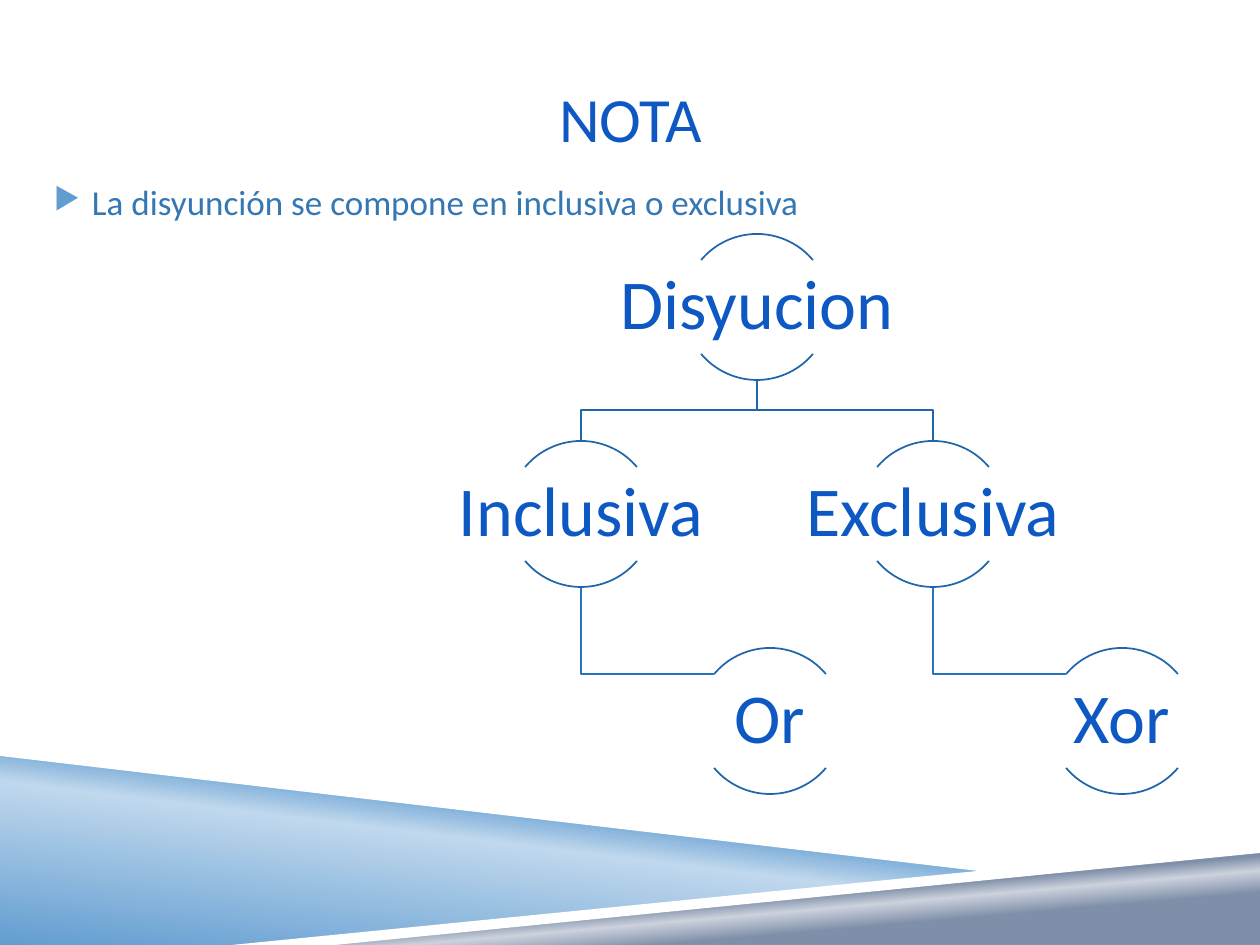
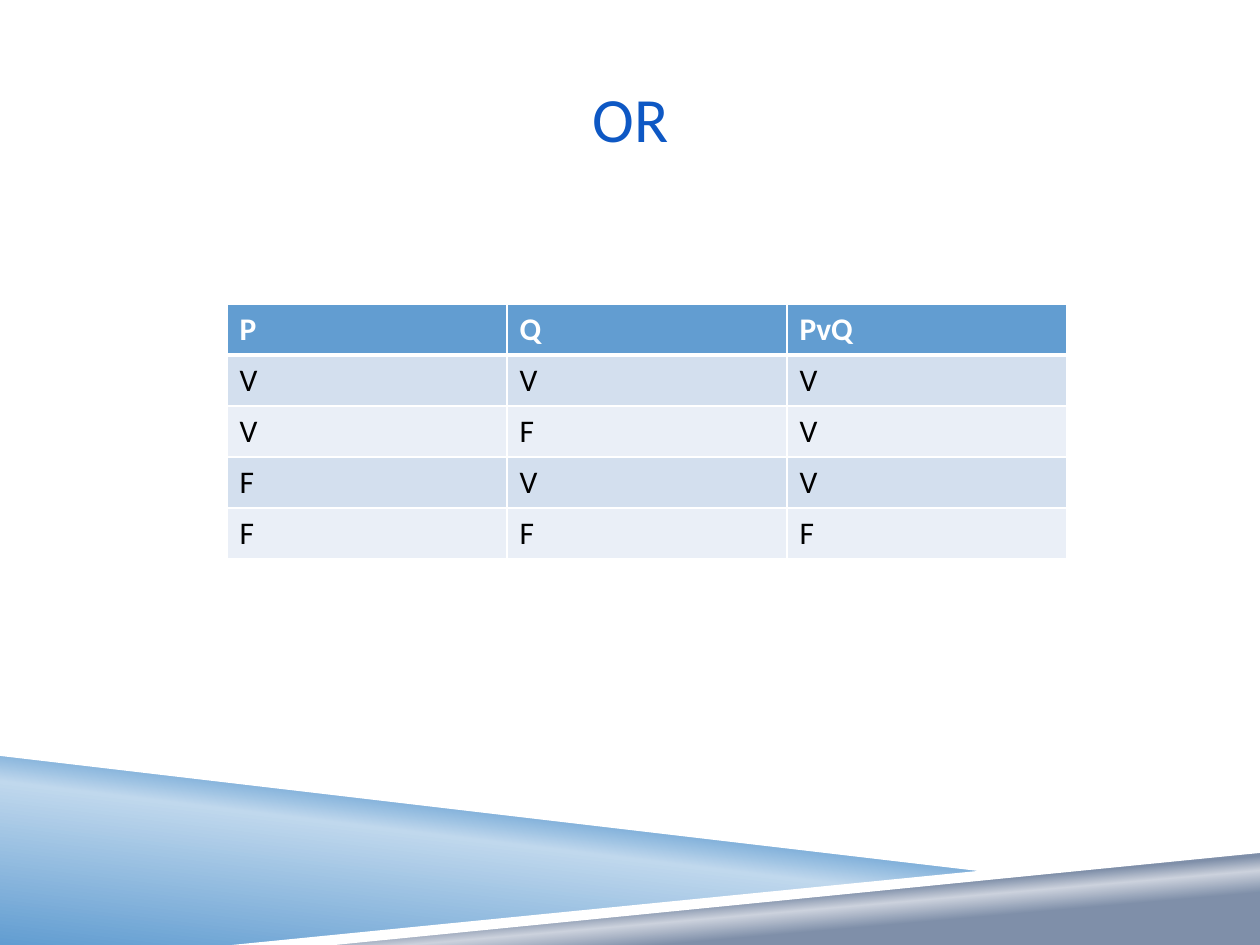
from lxml import etree
from pptx import Presentation, util as u
from pptx.dml.color import RGBColor
from pptx.enum import shapes as sh, text as tx
from pptx.oxml import parse_xml
from pptx.oxml.ns import qn, nsdecls

PX = 914400 / 126  # EMU in one px
WIDE, HIGH = 1260, 945
FONT = "Calibri"
BLUE, SKY, PALE = "0E58C4", "629DD1", "C0D8ED"
GREY, MIST, WHITE, BLACK = "7F8FA9", "CCD2DD", "FFFFFF", "000000"
TEAL, EDGE, LINK = "3477B2", "2166AB", "2573C1"
ODD, EVEN = "D3DFEE", "EAEFF7"


def px(n):
    return u.Emu(round(n * PX))


def rgb(code):
    return RGBColor.from_string(code)


# Basic parts

def write(para, words, size, color, bold=False):
    run = para.add_run()
    run.text = words
    font = run.font
    font.name, font.size, font.bold = FONT, u.Pt(size), bold
    font.color.rgb = rgb(color)


def add_text(slide, box, pad, anchor=tx.MSO_ANCHOR.TOP):
    """Empty text box; pad is the side and the top inset."""
    frame = slide.shapes.add_textbox(*map(px, box)).text_frame
    frame.word_wrap = True
    frame.vertical_anchor = anchor
    frame.margin_left = frame.margin_right = px(pad[0])
    frame.margin_top = frame.margin_bottom = px(pad[1])
    return frame


def outline(slide, points, close):
    pen = slide.shapes.build_freeform(*points[0], scale=PX)
    pen.add_line_segments(points[1:], close=close)
    shape = pen.convert_to_shape()
    shape.shadow.inherit = False
    return shape


def stroke(shape, color):
    shape.fill.background()
    shape.line.color.rgb = rgb(color)
    shape.line.width = u.Pt(1)


def blend(shape, stops, angle):
    marks = "".join(
        f'<a:gs pos="{pos * 1000}"><a:srgbClr val="{color}"/></a:gs>'
        for pos, color in stops)
    grad = parse_xml(
        f'<a:gradFill {nsdecls("a")} rotWithShape="1"><a:gsLst>{marks}</a:gsLst>'
        f'<a:lin ang="{angle * 60000}" scaled="0"/></a:gradFill>')
    shape._element.spPr.find(qn("a:custGeom")).addnext(grad)


# Shared look: bands at the foot and the title

def add_bands(slide):
    bands = [
        ([(0, 752), (998, 872), (252, HIGH), (0, HIGH)],
         [(0, SKY), (52, PALE), (66, SKY)], 277),
        ([(249, HIGH), (WIDE, 847), (WIDE, HIGH)],
         [(28, GREY), (40, MIST), (48, GREY)], 265),
        ([(0, 746), (0, 756), (995, 873), (1048, 869)], None, 0),
        ([(WIDE, 843), (232, HIGH), (335, HIGH), (WIDE, 853)], None, 0),
    ]
    for points, stops, angle in bands:
        band = outline(slide, points, True)
        band.line.fill.background()
        if stops:
            blend(band, stops, angle)
        else:
            band.fill.solid()
            band.fill.fore_color.rgb = rgb(WHITE)


def add_page(deck, title):
    slide = deck.slides.add_slide(deck.slide_layouts[6])
    add_bands(slide)
    frame = add_text(slide, (95, 38, 1071, 158), (0, 6), tx.MSO_ANCHOR.MIDDLE)
    para = frame.paragraphs[0]
    para.alignment = tx.PP_ALIGN.CENTER
    write(para, title, 36, BLUE)
    return slide


# Bulleted text

def add_point(slide, box, words):
    para = add_text(slide, box, (0, 6)).paragraphs[0]
    props = para._p.get_or_add_pPr()
    props.set("marL", str(px(48)))
    props.set("indent", str(px(-38)))
    color = etree.SubElement(props, qn("a:buClr"))
    etree.SubElement(color, qn("a:srgbClr")).set("val", SKY)
    etree.SubElement(props, qn("a:buSzPct")).set("val", "85000")
    etree.SubElement(props, qn("a:buChar")).set("char", "▶")
    write(para, words, 20, TEAL)


# Tree of nodes, each a label between two arcs

RING, STEP = 146, 207  # circle size, distance between rows


def add_node(slide, left, top, words):
    for start, end in ((132, 192), (24, 84)):
        arc = slide.shapes.add_shape(
            sh.MSO_SHAPE.ARC, *map(px, (left, top, RING, RING)))
        arc.adjustments[0], arc.adjustments[1] = start, end
        arc.shadow.inherit = False
        stroke(arc, EDGE)
    frame = add_text(slide, (left - 73, top + 26, 2 * RING, 93), (4, 4),
                     tx.MSO_ANCHOR.MIDDLE)
    para = frame.paragraphs[0]
    para.alignment = tx.PP_ALIGN.CENTER
    para.line_spacing = 0.9
    write(para, words, 40, BLUE)


def add_tree(slide, left, top, root, pairs):
    """left and top belong to the circle of the root."""
    half, spread, shift = RING // 2, 176, 189
    mid, foot = left + half, top + RING
    bend, row = (foot + top + STEP) // 2, top + STEP
    for side, (child, leaf) in zip((-1, 1), pairs):
        col = left + side * spread
        axis, low = col + half, row + STEP + 26
        stroke(outline(slide, [(mid, foot), (mid, bend), (axis, bend),
                               (axis, row)], False), EDGE)
        stroke(outline(slide, [(axis, row + RING), (axis, low),
                               (col + shift + 17, low)], False), LINK)
        add_node(slide, col, row, child)
        add_node(slide, col + shift, row + STEP, leaf)
    add_node(slide, left, top, root)


# Truth table

def add_edges(cell, thick):
    """White borders; thick names the sides of 3 pt."""
    props = cell._tc.get_or_add_tcPr()
    for spot, side in enumerate("LRTB"):
        width = u.Pt(3 if side in thick else 1)
        props.insert(spot, parse_xml(
            f'<a:ln{side} {nsdecls("a")} w="{width}"><a:solidFill>'
            f'<a:srgbClr val="{WHITE}"/></a:solidFill></a:ln{side}>'))


def add_truth(slide, left, top, rows):
    wide, high = 280, 51
    box = (left, top, wide * len(rows[0]), high * len(rows))
    grid = slide.shapes.add_table(
        len(rows), len(rows[0]), *map(px, box)).table
    for r, row in enumerate(rows):
        fill = SKY if r == 0 else ODD if r % 2 else EVEN
        for c, words in enumerate(row):
            cell = grid.cell(r, c)
            cell.fill.solid()
            cell.fill.fore_color.rgb = rgb(fill)
            add_edges(cell, {0: "B", 1: "T"}.get(r, ""))
            write(cell.text_frame.paragraphs[0], words, 18,
                  BLACK if r else WHITE, bold=r == 0)


def main():
    deck = Presentation()
    deck.slide_width, deck.slide_height = px(WIDE), px(HIGH)

    note = add_page(deck, "NOTA")
    add_point(note, (44, 175, 1071, 514),
              "La disyunción se compone en inclusiva o exclusiva")
    add_tree(note, 684, 234, "Disyucion",
             [("Inclusiva", "Or"), ("Exclusiva", "Xor")])

    table = add_page(deck, "OR")
    add_truth(table, 227, 304, [("P", "Q", "PvQ"), *("VVV", "VFV", "FVV", "FFF")])

    deck.save("out.pptx")


if __name__ == "__main__":
    main()
